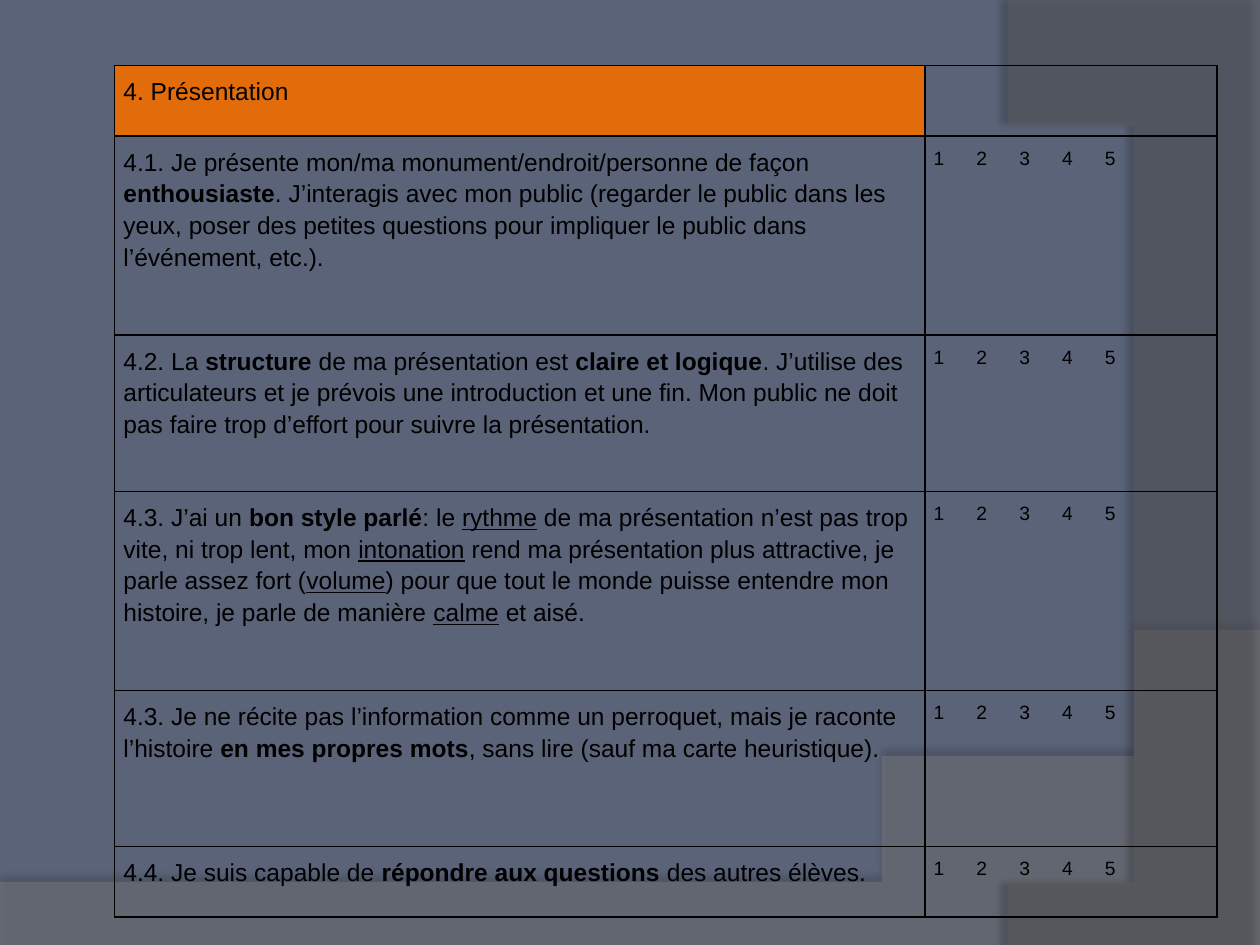
from lxml.etree import SubElement
from pptx import Presentation
from pptx.dml.color import RGBColor
from pptx.oxml.ns import qn
from pptx.util import Inches, Pt

BACKGROUND = RGBColor(0x5A, 0x63, 0x78)
WAVE_GREY = RGBColor(0x7F, 0x7F, 0x7F)
ARC_GREY = RGBColor(0x5E, 0x5E, 0x5E)
ORANGE = RGBColor(0xE3, 0x6C, 0x0A)
BLACK = RGBColor(0, 0, 0)

WIDTH, HEIGHT = 10, 7.5
FONT = "Arial"
PLAIN, BOLD, UNDERLINE = "plain", "bold", "underline"
CELL_INSET = 0.07
RATING_STEP = 0.34
RATING = "\t".join("12345")
COLUMN_WIDTHS = [6.43, 2.32]
HEADING = [("4. Présentation", PLAIN)]
# Row height, then the runs of the criterion
CRITERIA = [
    (1.58, [
        ("4.1. Je présente mon/ma monument/endroit/personne de façon ", PLAIN),
        ("enthousiaste", BOLD),
        (". J’interagis avec mon public (regarder le public dans les yeux, poser des petites "
         "questions pour impliquer le public dans l’événement, etc.).", PLAIN)]),
    (1.24, [
        ("4.2. La ", PLAIN), ("structure", BOLD),
        (" de ma présentation est ", PLAIN), ("claire et logique", BOLD),
        (". J’utilise des articulateurs et je prévois une introduction et une fin. "
         "Mon public ne doit pas faire trop d’effort pour suivre la présentation.", PLAIN)]),
    (1.58, [
        ("4.3. J’ai un ", PLAIN), ("bon style parlé", BOLD),
        (": le ", PLAIN), ("rythme", UNDERLINE),
        (" de ma présentation n’est pas trop vite, ni trop lent, mon ", PLAIN),
        ("intonation", UNDERLINE),
        (" rend ma présentation plus attractive, je parle assez fort (", PLAIN),
        ("volume", UNDERLINE),
        (") pour que tout le monde puisse entendre mon histoire, je parle de manière ", PLAIN),
        ("calme", UNDERLINE), (" et aisé.", PLAIN)]),
    (1.24, [
        ("4.3. Je ne récite pas l’information comme un perroquet, mais je raconte l’histoire ",
         PLAIN),
        ("en mes propres mots", BOLD), (", sans lire (sauf ma carte heuristique).", PLAIN)]),
    (0.56, [
        ("4.4. Je suis capable de ", PLAIN), ("répondre aux questions", BOLD),
        (" des autres élèves.", PLAIN)]),
]
HEADING_HEIGHT = 0.56


def add_color(parent, color, opacity):
    element = SubElement(parent, qn("a:srgbClr"), val=str(color))
    SubElement(element, qn("a:alpha"), val=str(opacity * 1000))


def bezier(start, control_1, control_2, end, steps=48):
    """Points of a cubic curve, both ends included."""
    points = []
    for step in range(steps + 1):
        t = step / steps
        weights = ((1 - t) ** 3, 3 * t * (1 - t) ** 2, 3 * t * t * (1 - t), t ** 3)
        points.append(tuple(
            sum(weight * value for weight, value in zip(weights, values))
            for values in zip(start, control_1, control_2, end)))
    return points


def add_swoosh(slide, box, points, color, opacity, shadow):
    """Translucent outline; points are shares of the box, shadow is opacity, distance, angle."""
    left, top, width, height = box
    corners = [(left + x * width, top + y * height) for x, y in points]
    builder = slide.shapes.build_freeform(*corners[0], scale=Inches(1))
    builder.add_line_segments(corners[1:], close=True)
    shape = builder.convert_to_shape()
    shape.line.fill.background()
    shape.fill.solid()
    shape.fill.fore_color.rgb = color
    fill_color = shape.fill._xPr.find(qn("a:solidFill")).find(qn("a:srgbClr"))
    SubElement(fill_color, qn("a:alpha"), val=str(opacity * 1000))
    shadow_opacity, distance, angle = shadow
    effects = SubElement(shape._element.spPr, qn("a:effectLst"))
    outer = SubElement(effects, qn("a:outerShdw"), blurRad=str(Pt(4)),
                       dist=str(Pt(distance)), dir=str(angle * 60000), rotWithShape="0")
    add_color(outer, BLACK, shadow_opacity)


def add_backdrop(slide):
    slide.background.fill.solid()
    slide.background.fill.fore_color.rgb = BACKGROUND
    wave = bezier((1, 0), (0.56, 0.9), (0.39, 0.86), (0, 0.8))
    add_swoosh(slide, (0, 5.2, WIDTH, 2.31), wave + [(0, 1), (1, 1)],
               WAVE_GREY, 45, (35, 3.5, 270))
    arc = bezier((0.1, 1), (0.67, 0.83), (1.09, 0.4), (0, 0))
    add_swoosh(slide, (8, 0, 2, HEIGHT), arc + [(1, 0), (1, 1)],
               ARC_GREY, 40, (45, 4, 180))


def style_cell(cell, fill=None):
    cell.margin_left = cell.margin_right = Inches(CELL_INSET)
    cell.margin_top = cell.margin_bottom = Inches(CELL_INSET)
    properties = cell._tc.get_or_add_tcPr()
    for side in ("lnL", "lnR", "lnT", "lnB"):
        border = SubElement(properties, qn(f"a:{side}"), w=str(Pt(1)))
        add_color(SubElement(border, qn("a:solidFill")), BLACK, 100)
    if fill is None:
        cell.fill.background()
    else:
        cell.fill.solid()
        cell.fill.fore_color.rgb = fill


def write_cell(cell, runs, size):
    paragraph = cell.text_frame.paragraphs[0]
    paragraph.line_spacing = 1.15
    for text, style in runs:
        run = paragraph.add_run()
        run.text = text
        run.font.name = FONT
        run.font.size = Pt(size)
        run.font.color.rgb = BLACK
        run.font.bold = style == BOLD
        run.font.underline = style == UNDERLINE
    return paragraph


def write_rating(cell):
    paragraph = write_cell(cell, [(RATING, PLAIN)], 11)
    tabs = SubElement(paragraph._p.get_or_add_pPr(), qn("a:tabLst"))
    for index in range(1, 5):
        SubElement(tabs, qn("a:tab"), pos=str(Inches(RATING_STEP * index)), algn="l")


def add_criteria_table(slide, left, top):
    heights = [HEADING_HEIGHT] + [height for height, _ in CRITERIA]
    table = slide.shapes.add_table(
        len(heights), len(COLUMN_WIDTHS), Inches(left), Inches(top),
        Inches(sum(COLUMN_WIDTHS)), Inches(sum(heights))).table
    table.first_row = table.horz_banding = False
    for column, width in zip(table.columns, COLUMN_WIDTHS):
        column.width = Inches(width)
    for row, height in zip(table.rows, heights):
        row.height = Inches(height)
    for cell in table.iter_cells():
        style_cell(cell, ORANGE if cell is not None and cell._tc is table.cell(0, 0)._tc else None)
    write_cell(table.cell(0, 0), HEADING, 14)
    for row, (_, runs) in enumerate(CRITERIA, start=1):
        write_cell(table.cell(row, 0), runs, 14)
        write_rating(table.cell(row, 1))


def main():
    presentation = Presentation()
    presentation.slide_width = Inches(WIDTH)
    presentation.slide_height = Inches(HEIGHT)
    slide = presentation.slides.add_slide(presentation.slide_layouts[6])
    add_backdrop(slide)
    add_criteria_table(slide, 0.91, 0.52)
    presentation.save("out.pptx")


if __name__ == "__main__":
    main()
